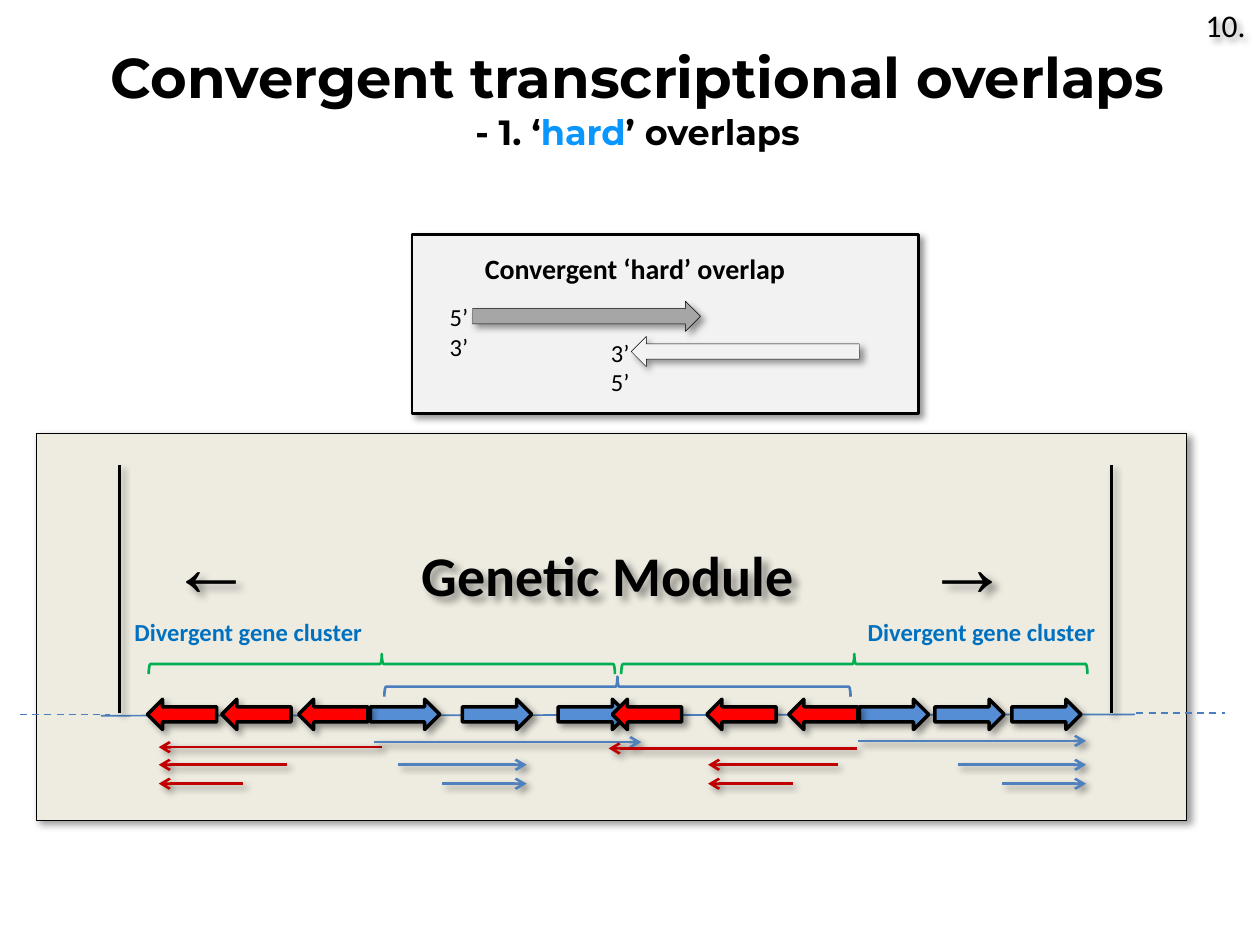
from lxml import etree
from pptx import Presentation
from pptx.dml.color import RGBColor
from pptx.enum.dml import MSO_LINE
from pptx.enum.shapes import MSO_CONNECTOR, MSO_SHAPE as SHAPE
from pptx.enum.text import MSO_ANCHOR, PP_ALIGN as ALIGN
from pptx.oxml import parse_xml
from pptx.oxml.ns import nsdecls, qn
from pptx.util import Inches, Pt

BLACK, RED, BLUE = "000000", "C00000", "4F81BD"
AXIS_BLUE, GREEN, LABEL_BLUE = "4B7EBC", "00B050", "0070C0"
color = RGBColor.from_string
SHADOW = (
    f'<a:effectLst {nsdecls("a")}><a:outerShdw blurRad="50800" dist="38100" '
    'dir="2700000" algn="tl" rotWithShape="0"><a:srgbClr val="000000">'
    '<a:alpha val="40000"/></a:srgbClr></a:outerShdw></a:effectLst>'
)
NO_SHADOW = f'<a:effectLst {nsdecls("a")}/>'


def style(item, line=None, width=1, fill=None, shadow=True, head=False):
    if line:
        item.line.color.rgb = color(line)
        item.line.width = Pt(width)
    if fill:
        item.fill.solid()
        item.fill.fore_color.rgb = color(fill)
    elif hasattr(item, "fill"):
        item.fill.background()
    if head:
        tail = etree.SubElement(item.line._get_or_add_ln(), qn("a:tailEnd"))
        tail.set("type", "arrow")
    item._element.spPr.append(parse_xml(SHADOW if shadow else NO_SHADOW))


def write(para, text, size=14, font="Calibri", rgb=BLACK, bold=False, align=ALIGN.LEFT):
    span = para.add_run()
    span.text = text
    span.font.size = Pt(size)
    span.font.name = font
    span.font.bold = bold
    span.font.color.rgb = color(rgb)
    para.alignment = align


deck = Presentation()
deck.slide_width, deck.slide_height = Inches(10), Inches(7.5)
page = deck.slides.add_slide(deck.slide_layouts[5])
shapes = page.shapes

title = shapes.title
title.left, title.top = Inches(0.59), Inches(0.29)
title.width, title.height = Inches(8.94), Inches(0.98)
title.text_frame.vertical_anchor = MSO_ANCHOR.TOP
title_format = {"font": "Montserrat", "bold": True, "align": ALIGN.CENTER}
write(title.text_frame.paragraphs[0], "Convergent transcriptional overlaps", size=32, **title_format)
subtitle = title.text_frame.add_paragraph()
for text, rgb in (("- 1. ‘", BLACK), ("hard", "0996FF"), ("’ overlaps", BLACK)):
    write(subtitle, text, size=20, rgb=rgb, **title_format)

panel = shapes.add_shape(SHAPE.RECTANGLE, Inches(0.29), Inches(3.44), Inches(9.13), Inches(3.07))
style(panel, BLACK, 0.75, "EEECE1")

for x1, y1, x2, y2, dashed in (
    (0.8, 5.68, 9.01, 5.67, False),
    (0.16, 5.67, 0.87, 5.67, True),
    (9.02, 5.66, 9.72, 5.66, True),
):
    strand = shapes.add_connector(MSO_CONNECTOR.STRAIGHT, Inches(x1), Inches(y1), Inches(x2), Inches(y2))
    style(strand, AXIS_BLUE, 1, shadow=False)
    if dashed:
        strand.line.dash_style = MSO_LINE.DASH

for x in (0.95, 8.82):
    border = shapes.add_connector(MSO_CONNECTOR.STRAIGHT, Inches(x), Inches(3.69), Inches(x), Inches(5.66))
    style(border, BLACK, 1.5)

for fill, flipped, lefts in (
    ("558ED5", False, (2.94, 3.67, 4.43, 6.82, 7.42, 8.03)),
    ("FF0000", True, (1.17, 1.76, 2.37, 4.86, 5.61, 6.26)),
):
    for left in lefts:
        gene = shapes.add_shape(SHAPE.RIGHT_ARROW, Inches(left), Inches(5.55), Inches(0.55), Inches(0.24))
        style(gene, BLACK, 2, fill)
        if flipped:
            gene._element.spPr.xfrm.set("flipH", "1")

for start, end, y, rgb in (
    (3.03, 1.26, 5.93, RED),
    (2.28, 1.26, 6.07, RED),
    (1.93, 1.26, 6.22, RED),
    (2.97, 5.09, 5.89, BLUE),
    (3.16, 4.18, 6.07, BLUE),
    (3.51, 4.18, 6.22, BLUE),
    (6.65, 5.62, 6.07, RED),
    (6.29, 5.62, 6.22, RED),
    (6.81, 8.62, 5.88, BLUE),
    (7.6, 8.62, 6.07, BLUE),
    (7.95, 8.62, 6.22, BLUE),
    (6.8, 4.83, 5.94, RED),
):
    transcript = shapes.add_connector(MSO_CONNECTOR.STRAIGHT, Inches(start), Inches(y), Inches(end), Inches(y))
    style(transcript, rgb, 1.5, head=True)

for left, top, rgb in ((4.82, 3.6, AXIS_BLUE), (6.7, 3.42, GREEN), (2.95, 3.42, GREEN)):
    brace = shapes.add_shape(SHAPE.LEFT_BRACE, Inches(left), Inches(top), Inches(0.16), Inches(3.7))
    brace.rotation = 90
    style(brace, rgb, 1.5, shadow=False)

number = shapes.add_textbox(Inches(9.47), Inches(0), Inches(0.52), Inches(0.4))
number.text_frame.word_wrap = False
style(number)
write(number.text_frame.paragraphs[0], "10.", size=18)

callout = shapes.add_group_shape().shapes
frame = callout.add_shape(SHAPE.RECTANGLE, Inches(3.27), Inches(1.86), Inches(4.02), Inches(1.42))
style(frame, BLACK, 1.5, "F2F2F2")
heading = callout.add_textbox(Inches(3.75), Inches(1.95), Inches(2.62), Inches(0.37))
heading.text_frame.word_wrap = False
write(heading.text_frame.paragraphs[0], "Convergent ‘hard’ overlap", size=16, bold=True)

for label_left, label_top, ends, arrow_left, arrow_top, fill, flipped in (
    (3.47, 2.35, ("5’", "3’"), 3.75, 2.39, "A6A6A6", False),
    (4.75, 2.63, ("3’", "5’"), 5.01, 2.67, "F2F2F2", True),
):
    label = callout.add_textbox(Inches(label_left), Inches(label_top), Inches(2.43), Inches(0.34))
    label.text_frame.word_wrap = True
    write(label.text_frame.paragraphs[0], ends[0])
    write(label.text_frame.add_paragraph(), ends[1])
    arrow = callout.add_shape(SHAPE.RIGHT_ARROW, Inches(arrow_left), Inches(arrow_top), Inches(1.81), Inches(0.24))
    style(arrow, BLACK, 0.25, fill)
    if flipped:
        arrow._element.spPr.xfrm.set("flipH", "1")

module = shapes.add_textbox(Inches(1.25), Inches(4.02), Inches(6.93), Inches(0.91))
module.text_frame.word_wrap = True
style(module)
para = module.text_frame.paragraphs[0]
tabs = etree.SubElement(para._p.get_or_add_pPr(), qn("a:tabLst"))
for stop in (2, 6):
    etree.SubElement(tabs, qn("a:tab"), pos=str(Inches(stop)), algn="l")
for text, size, font in (
    ("←", 48, "Arial"),
    ("\t", 24, "Arial"),
    ("Genetic Module", 32, "Calibri"),
    ("\t", 24, "Calibri"),
    ("→", 48, "Arial"),
):
    write(para, text, size=size, font=font, bold=True)

for left in (0.96, 6.78):
    cluster = shapes.add_textbox(Inches(left), Inches(4.85), Inches(2.02), Inches(0.34))
    cluster.text_frame.word_wrap = False
    write(cluster.text_frame.paragraphs[0], "Divergent gene cluster", rgb=LABEL_BLUE, bold=True, align=ALIGN.CENTER)

deck.save("out.pptx")
